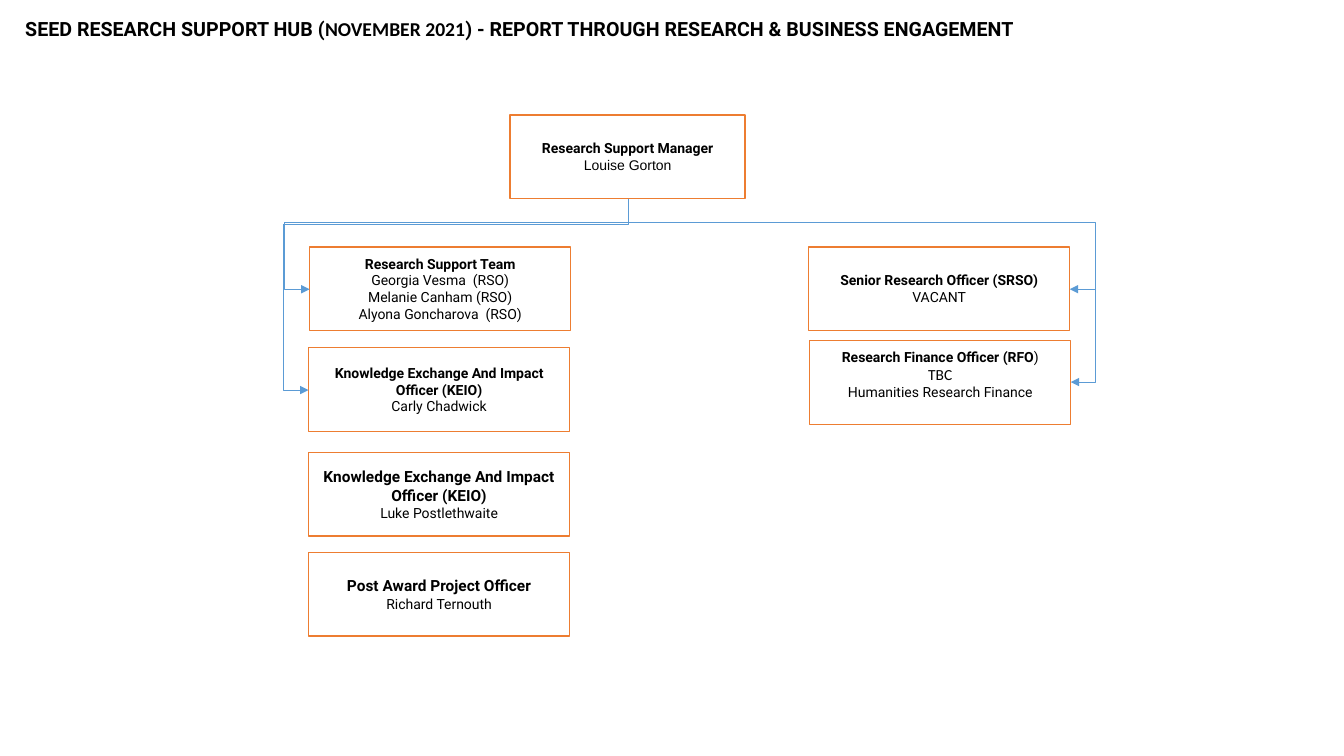
from pptx import Presentation
from pptx.dml.color import RGBColor
from pptx.enum.shapes import MSO_CONNECTOR as CONN, MSO_SHAPE as SHAPE
from pptx.enum.text import MSO_ANCHOR as ANCHOR, MSO_AUTO_SIZE as FIT, PP_ALIGN as ALIGN
from pptx.oxml.ns import qn
from pptx.util import Pt
from lxml import etree

# Content: text with the format that differs from plain 10 pt Roboto
TITLE = [
    ("SEED RESEARCH SUPPORT HUB (", {}),
    ("NOVEMBER 2021", {"font": "Calibri"}),
    (") - REPORT THROUGH RESEARCH & BUSINESS ENGAGEMENT", {}),
]
HEAD = {"bold": True}
BIG_HEAD = {"bold": True, "size": 11}
KEIO = "Knowledge Exchange And Impact Officer (KEIO)"

# Boxes: left, top, width, bottom inset, paragraphs of runs
BOXES = [
    (506, 114, 233, 5, [[("Research Support Manager", HEAD)],
                        [("Louise Gorton", {"font": "Arial"})]]),
    (307, 245, 259, 5, [[("Research Support Team", HEAD)],
                        [("Georgia Vesma  (RSO)", {})],
                        [("Melanie Canham (RSO)", {})],
                        [("Alyona Goncharova  (RSO)", {})]]),
    (306, 345, 259, 5, [[(KEIO, HEAD)], [("Carly Chadwick", {})]]),
    (306, 449, 259, 5, [[(KEIO, BIG_HEAD)], [("Luke Postlethwaite", {})]]),
    (306, 548, 259, 5, [[("Post Award Project Officer", BIG_HEAD)],
                        [("Richard Ternouth", {})]]),
    (802, 245, 259, 5, [[("Senior Research Officer (SRSO)", HEAD)], [("VACANT", {})]]),
    (803, 338, 259, 21, [[("Research Finance Officer (RFO", HEAD), (")", {})],
                         [("TBC", {"font": "Calibri", "size": 11})],
                         [("Humanities Research Finance", {})]]),
]
BOX_H = 83

# Arrows: start, end, first turn, second turn, leaves downwards
ARROWS = [
    ((623, 197), (307, 287), 221, 282, True),
    ((623, 197), (306, 387), 223, 281, True),
    ((623, 221), (1061, 287), 1086, None, False),
    ((1086, 287), (1062, 379), None, None, True),
]

ORANGE, BLUE, BLACK = "ED7D31", "5B9BD5", "000000"
PX = 9144  # 100 px to the inch


def px(n):
    return round(n * PX)


def rgb(hex_text):
    return RGBColor.from_string(hex_text)


def add_run(p, text, size=10, font="Roboto", bold=False, color=BLACK):
    r = p.add_run()
    r.text = text
    r.font.size, r.font.name, r.font.bold = Pt(size), font, bold
    r.font.color.rgb = rgb(color)


def add_box(shapes, left, top, width, bottom, paragraphs):
    s = shapes.add_shape(SHAPE.RECTANGLE, px(left), px(top), px(width), px(BOX_H))
    s.shadow.inherit = False
    s.fill.background()
    s.line.color.rgb = rgb(ORANGE)
    s.line.width = Pt(1)
    tf = s.text_frame
    tf.word_wrap = True
    tf.vertical_anchor = ANCHOR.MIDDLE
    tf.margin_bottom = px(bottom)
    for i, runs in enumerate(paragraphs):
        p = tf.paragraphs[0] if i == 0 else tf.add_paragraph()
        p.alignment = ALIGN.CENTER
        for text, fmt in runs:
            add_run(p, text, **fmt)


def add_arrow(shapes, start, end, turn1, turn2, down):
    (x1, y1), (x2, y2) = start, end
    # A line that leaves downwards is an unturned one rotated by 90 degrees
    w, h = (y2 - y1, x1 - x2) if down else (x2 - x1, y2 - y1)
    left, top = (x1 + x2 - w) / 2, (y1 + y2 - h) / 2
    s = shapes.add_connector(CONN.ELBOW, px(left), px(top), px(left + w), px(top + h))
    s.line.color.rgb = rgb(BLUE)
    s.line.width = Pt(0.5)

    # Turns as fractions of the box
    turns = []
    if turn1 is not None:
        turns.append((turn1 - (y1 if down else x1)) / w)
    if turn2 is not None:
        turns.append((x1 - turn2) / h)
    sp_pr = s._element.spPr
    if down:
        sp_pr.find(qn("a:xfrm")).set("rot", str(90 * 60000))
    geom = sp_pr.find(qn("a:prstGeom"))
    geom.set("prst", f"bentConnector{2 + len(turns)}")
    guides = geom.find(qn("a:avLst"))
    for i, turn in enumerate(turns, 1):
        etree.SubElement(guides, qn("a:gd"), name=f"adj{i}", fmla=f"val {round(turn * 100000)}")

    # Arrowhead and no shadow
    etree.SubElement(sp_pr.find(qn("a:ln")), qn("a:tailEnd"), type="triangle")
    etree.SubElement(sp_pr, qn("a:effectLst"))


def main():
    prs = Presentation()
    prs.slide_width, prs.slide_height = px(1333), px(750)
    slide = prs.slides.add_slide(prs.slide_layouts[5])

    # Title
    title = slide.shapes.title
    title.left, title.top, title.width, title.height = px(15), px(12), px(1280), px(50)
    tf = title.text_frame
    tf.word_wrap = True
    tf.auto_size = FIT.NONE
    tf.vertical_anchor = ANCHOR.TOP
    p = tf.paragraphs[0]
    p.alignment = ALIGN.LEFT
    for text, fmt in TITLE:
        add_run(p, text, size=14, bold=True, **fmt)

    # Organisation chart
    for box in BOXES:
        add_box(slide.shapes, *box)
    for arrow in ARROWS:
        add_arrow(slide.shapes, *arrow)

    prs.save("out.pptx")


if __name__ == "__main__":
    main()
